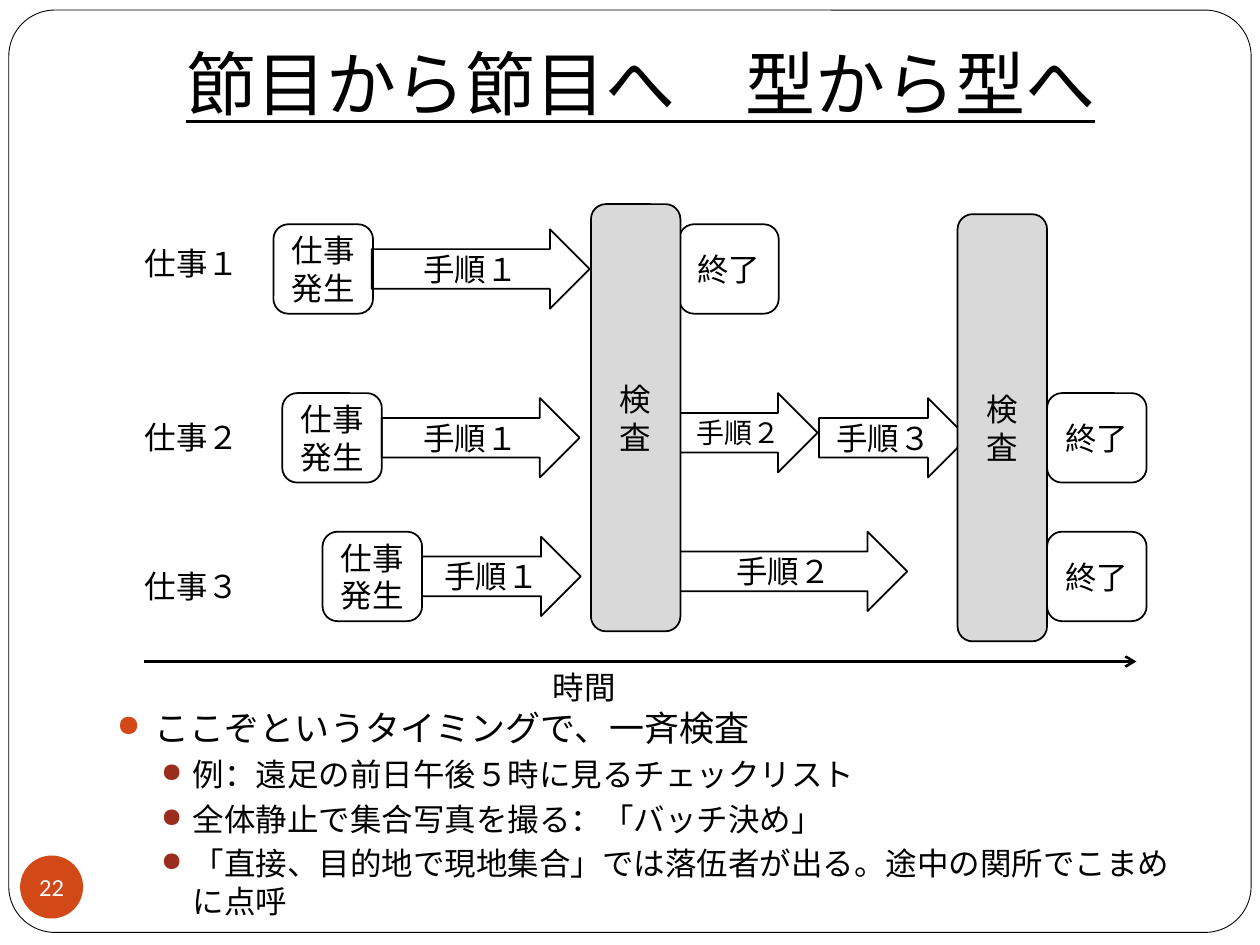
from lxml import etree
from pptx import Presentation
from pptx.dml.color import RGBColor
from pptx.enum import shapes, text
from pptx.oxml import ns
from pptx.util import Inches, Pt

BLACK = RGBColor(0x00, 0x00, 0x00)
WHITE = RGBColor(0xFF, 0xFF, 0xFF)
GRAY = RGBColor(0xD9, 0xD9, 0xD9)
ORANGE = RGBColor(0xD3, 0x48, 0x17)
DARK_RED = RGBColor(0x9B, 0x2D, 0x1F)
JAPANESE, LATIN = "Noto Sans CJK JP", "Calibri"
KINDS = shapes.MSO_SHAPE
CENTER = text.PP_ALIGN.CENTER

# Content
TITLE = "節目から節目へ　型から型へ"
PAGE_NUMBER = "22"
START, END, GATE, TIME = "仕事発生", "終了", "検査", "時間"
# Each job: name, label top, box top, start left, end left, steps
# Each step: name, left, top, width, text size
JOBS = [
    ("仕事１", 1.89, 1.78, 2.17, 5.39, [("手順１", 2.95, 1.82, 1.73, 18)]),
    ("仕事２", 3.27, 3.12, 2.24, 8.31, [("手順１", 3.03, 3.16, 1.57, 18),
                                     ("手順２", 5.39, 3.12, 1.10, 16),
                                     ("手順３", 6.50, 3.16, 1.18, 18)]),
    ("仕事３", 4.45, 4.22, 2.56, 8.31, [("手順１", 3.35, 4.26, 1.26, 18),
                                     ("手順２", 5.39, 4.22, 1.81, 18)]),
]
GATES = [(4.69, 1.62), (7.60, 1.70)]
# Each bullet: level, text
BULLETS = [
    (0, "ここぞというタイミングで、一斉検査"),
    (1, "例：遠足の前日午後５時に見るチェックリスト"),
    (1, "全体静止で集合写真を撮る：「バッチ決め」"),
    (1, "「直接、目的地で現地集合」では落伍者が出る。途中の関所でこまめに点呼"),
]
# Each level: text size, left margin, hanging indent, space before, bullet colour
LEVELS = [(20, 0.30, 0.30, 5.8, ORANGE), (18, 0.60, 0.25, 3.8, DARK_RED)]

# Sizes in inches
BOX_WIDTH, BOX_HEIGHT = 0.79, 0.71
GATE_WIDTH, GATE_HEIGHT = 0.71, 3.39
ARROW_HEIGHT = 0.63
LABEL_LEFT, LABEL_HEIGHT = 1.05, 0.40
TIME_Y = 5.25


def add_xml(parent, tag, **attributes):
    return etree.SubElement(parent, ns.qn(tag), attributes)


def format_paragraph(paragraph, size, font=JAPANESE, color=BLACK, align=None):
    paragraph.alignment = align
    for run in paragraph.runs:
        run.font.size = Pt(size)
        run.font.color.rgb = color
        run.font.name = font
        add_xml(run.font._element, "a:ea", typeface=JAPANESE)


def add_block(slide, kind, box, words="", size=18, fill=None, line=1,
              font=JAPANESE, color=BLACK):
    shape = slide.shapes.add_shape(kind, *map(Inches, box))
    shape.shadow.inherit = False
    if fill is None:
        shape.fill.background()
    else:
        shape.fill.solid()
        shape.fill.fore_color.rgb = fill
    if line:
        shape.line.color.rgb = BLACK
        shape.line.width = Pt(line)
    else:
        shape.line.fill.background()
    if words:
        frame = shape.text_frame
        frame.text = words
        frame.vertical_anchor = text.MSO_ANCHOR.MIDDLE
        format_paragraph(frame.paragraphs[0], size, font, color, CENTER)
    return shape


def add_label(slide, box, words):
    frame = slide.shapes.add_textbox(*map(Inches, box)).text_frame
    frame.text = words
    frame.word_wrap = False
    frame.auto_size = text.MSO_AUTO_SIZE.SHAPE_TO_FIT_TEXT
    format_paragraph(frame.paragraphs[0], 18)


def add_title(slide):
    frame = slide.shapes.add_textbox(*map(Inches, (0.28, 0.3, 9.61, 0.79))).text_frame
    frame.text = TITLE
    frame.word_wrap = True
    frame.vertical_anchor = text.MSO_ANCHOR.BOTTOM
    frame.margin_bottom = Inches(0.1)
    format_paragraph(frame.paragraphs[0], 40, LATIN, align=CENTER)
    frame.paragraphs[0].runs[0].font.underline = True


def add_timeline(slide):
    line = slide.shapes.add_connector(
        shapes.MSO_CONNECTOR.STRAIGHT,
        *map(Inches, (1.14, TIME_Y, 9.02, TIME_Y)))
    line.line.color.rgb = BLACK
    line.line.width = Pt(1.5)
    add_xml(line.line._get_or_add_ln(), "a:tailEnd", type="arrow")
    add_xml(line._element.spPr, "a:effectLst")
    add_label(slide, (4.29, TIME_Y, 0.71, LABEL_HEIGHT), TIME)


def add_bullets(slide):
    frame = slide.shapes.add_textbox(*map(Inches, (0.83, 5.56, 8.75, 1.5))).text_frame
    frame.word_wrap = True
    frame.text = "\n".join(words for _, words in BULLETS)
    for paragraph, (level, _) in zip(frame.paragraphs, BULLETS):
        size, margin, hanging, space, color = LEVELS[level]
        paragraph.level = level
        paragraph.space_before = Pt(space)
        format_paragraph(paragraph, size, LATIN)
        properties = paragraph._p.get_or_add_pPr()
        properties.set("marL", str(Inches(margin)))
        properties.set("indent", str(-Inches(hanging)))
        add_xml(add_xml(properties, "a:buClr"), "a:srgbClr", val=str(color))
        add_xml(properties, "a:buSzPct", val="85000")
        add_xml(properties, "a:buChar", char="●")


def main():
    presentation = Presentation()
    presentation.slide_width = Inches(10)
    presentation.slide_height = Inches(7.5)
    slide = presentation.slides.add_slide(presentation.slide_layouts[6])

    # Slide frame
    border = add_block(slide, KINDS.ROUNDED_RECTANGLE, (0.07, 0.08, 9.86, 7.32),
                       fill=WHITE, line=0.5)
    border.adjustments[0] = 0.05

    # Jobs, one row each
    for name, label_top, box_top, start, end, steps in JOBS:
        add_label(slide, (LABEL_LEFT, label_top, 0.96, LABEL_HEIGHT), name)
        for step, left, top, width, size in steps:
            add_block(slide, KINDS.RIGHT_ARROW, (left, top, width, ARROW_HEIGHT),
                      step, size)
        for left, words in ((start, START), (end, END)):
            add_block(slide, KINDS.ROUNDED_RECTANGLE,
                      (left, box_top, BOX_WIDTH, BOX_HEIGHT), words)

    # Inspection gates across the rows
    for left, top in GATES:
        add_block(slide, KINDS.ROUNDED_RECTANGLE,
                  (left, top, GATE_WIDTH, GATE_HEIGHT), GATE, fill=GRAY)

    add_timeline(slide)
    add_title(slide)
    add_bullets(slide)

    # Page number
    badge = add_block(slide, KINDS.OVAL, (0.16, 6.79, 0.5, 0.5), PAGE_NUMBER, 14,
                      ORANGE, line=0, font=LATIN, color=WHITE)
    frame = badge.text_frame
    frame.word_wrap = False
    frame.margin_left = frame.margin_right = 0
    frame.margin_top = frame.margin_bottom = 0

    presentation.save("out.pptx")


if __name__ == "__main__":
    main()
